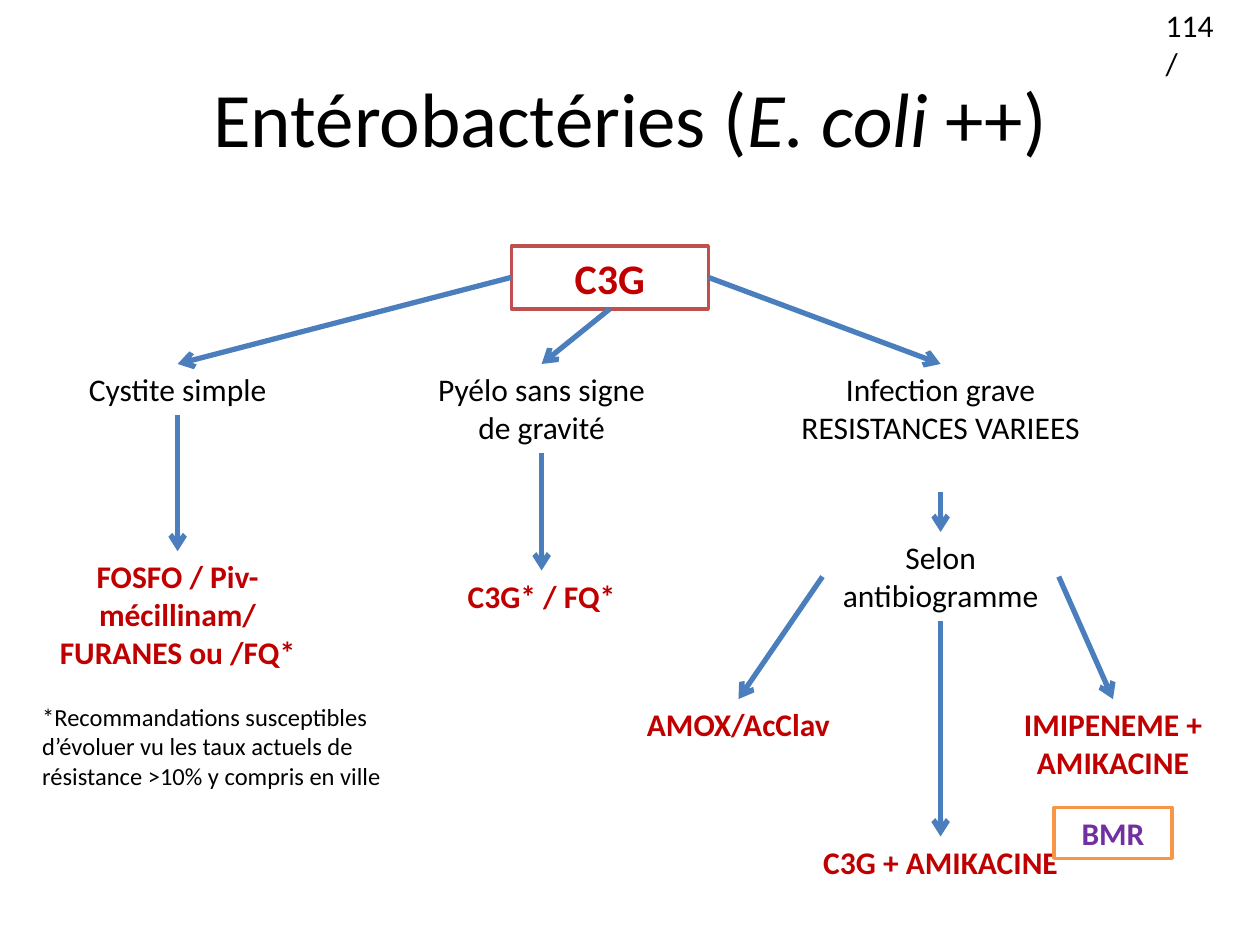
from lxml import etree
from pptx import Presentation
from pptx.dml.color import RGBColor
from pptx.enum.shapes import MSO_CONNECTOR, MSO_SHAPE
from pptx.enum.text import MSO_ANCHOR, PP_ALIGN
from pptx.oxml.ns import qn
from pptx.util import Pt

BLACK = RGBColor(0x00, 0x00, 0x00)
WHITE = RGBColor(0xFF, 0xFF, 0xFF)
DRUG_RED = RGBColor(0xC0, 0x00, 0x00)
FRAME_RED = RGBColor(0xC0, 0x50, 0x4D)
ORANGE = RGBColor(0xF7, 0x96, 0x46)
PURPLE = RGBColor(0x70, 0x30, 0xA0)
BLUE = RGBColor(0x4B, 0x7E, 0xBC)

STRAIGHT = MSO_CONNECTOR.STRAIGHT
RECTANGLE = MSO_SHAPE.RECTANGLE
CENTER, LEFT = PP_ALIGN.CENTER, PP_ALIGN.LEFT
MIDDLE, TOP_ANCHOR = MSO_ANCHOR.MIDDLE, MSO_ANCHOR.TOP
TOP, LEFT_SIDE, BOTTOM, RIGHT_SIDE = range(4)

# Centres of the tree columns, in points
CYSTITIS_X, PYELO_X, SEVERE_X = 101.5, 309.5, 537.5
AMOX_X, IMIPENEM_X = 422, 636
LEVEL_1, LEVEL_3 = 208, 399.5


def add_run(paragraph, text, size, color, bold=False, italic=False):
    run = paragraph.add_run()
    run.text = text
    font = run.font
    font.name, font.size = "Calibri", Pt(size)
    font.bold, font.italic = bold, italic
    font.color.rgb = color


def add_label(slide, center, top, width, height, lines, size=18,
              color=BLACK, bold=False, align=CENTER):
    """Text box centred on a column, one paragraph per line."""
    box = slide.shapes.add_textbox(Pt(center - width / 2), Pt(top),
                                   Pt(width), Pt(height))
    frame = box.text_frame
    frame.word_wrap = True
    for index, line in enumerate(lines):
        paragraph = frame.add_paragraph() if index else frame.paragraphs[0]
        paragraph.alignment = align
        add_run(paragraph, line, size, color, bold)
    return box


def add_drug(slide, center, top, height, text):
    return add_label(slide, center, top, 168.5, height, [text],
                     color=DRUG_RED, bold=True)


def add_framed(slide, center, top, width, height, text, size, color, border):
    box = slide.shapes.add_shape(RECTANGLE, Pt(center - width / 2), Pt(top),
                                 Pt(width), Pt(height))
    box.shadow.inherit = False
    box.fill.solid()
    box.fill.fore_color.rgb = WHITE
    box.line.color.rgb = border
    box.line.width = Pt(2)
    frame = box.text_frame
    frame.word_wrap = True
    frame.vertical_anchor = TOP_ANCHOR
    frame.paragraphs[0].alignment = CENTER
    add_run(frame.paragraphs[0], text, size, color, bold=True)
    return box


def add_arrow(slide, source, side, target):
    """Arrow from a side of the source to the top of the target."""
    arrow = slide.shapes.add_connector(STRAIGHT, 0, 0, 0, 0)
    arrow.begin_connect(source, side)
    arrow.end_connect(target, TOP)
    arrow.line.color.rgb = BLUE
    arrow.line.width = Pt(3)
    etree.SubElement(arrow.line._get_or_add_ln(), qn("a:tailEnd"), type="arrow")
    etree.SubElement(arrow._element.spPr, qn("a:effectLst"))


def add_title(slide):
    box = slide.shapes.add_textbox(Pt(36), Pt(21.6), Pt(648), Pt(90))
    frame = box.text_frame
    frame.word_wrap = True
    frame.vertical_anchor = MIDDLE
    title = frame.paragraphs[0]
    title.alignment = CENTER
    add_run(title, "Entérobactéries (", 44, BLACK)
    add_run(title, "E. coli ", 44, BLACK, italic=True)
    add_run(title, "++)", 44, BLACK)


def add_footnote(slide):
    box = slide.shapes.add_textbox(Pt(17), Pt(397.5), Pt(231), Pt(58))
    box.text_frame.word_wrap = False
    note = box.text_frame.paragraphs[0]
    lines = ("*Recommandations susceptibles",
             "d’évoluer vu les taux actuels de",
             "résistance >10% y compris en ville")
    for index, line in enumerate(lines):
        if index:
            note.add_line_break()
        add_run(note, line, 14, BLACK)


def main():
    deck = Presentation()
    deck.slide_width, deck.slide_height = Pt(720), Pt(540)
    slide = deck.slides.add_slide(deck.slide_layouts[6])

    # Page number and title
    add_label(slide, 680.5, 0, 43, 29, ["114/"], align=LEFT)
    add_title(slide)

    # Root and clinical situations
    c3g = add_framed(slide, 348.5, 140.5, 112.5, 36, "C3G", 24,
                     DRUG_RED, FRAME_RED)
    cystitis = add_label(slide, CYSTITIS_X, LEVEL_1, 135, 29,
                         ["Cystite simple"])
    pyelo = add_label(slide, PYELO_X, LEVEL_1, 135, 51,
                      ["Pyélo sans signe de gravité"])
    severe = add_label(slide, SEVERE_X, LEVEL_1, 208, 73,
                       ["Infection grave", "RESISTANCES VARIEES"])
    antibiogram = add_label(slide, SEVERE_X, 304, 135, 51,
                            ["Selon antibiogramme"])

    # Treatments
    fosfo = add_drug(slide, CYSTITIS_X, 315, 73,
                     "FOSFO / Piv-mécillinam/ FURANES ou /FQ*")
    c3g_fq = add_drug(slide, PYELO_X, 326, 29, "C3G* / FQ*")
    amox = add_drug(slide, AMOX_X, LEVEL_3, 29, "AMOX/AcClav")
    c3g_amikacin = add_drug(slide, SEVERE_X, 478, 51, "C3G + AMIKACINE")
    imipenem = add_drug(slide, IMIPENEM_X, LEVEL_3, 51,
                        "IMIPENEME + AMIKACINE")
    add_framed(slide, IMIPENEM_X, 461.5, 67.5, 29, "BMR", 18, PURPLE, ORANGE)

    # Decision arrows
    for source, side, target in (
        (c3g, LEFT_SIDE, cystitis),
        (c3g, BOTTOM, pyelo),
        (c3g, RIGHT_SIDE, severe),
        (cystitis, BOTTOM, fosfo),
        (pyelo, BOTTOM, c3g_fq),
        (severe, BOTTOM, antibiogram),
        (antibiogram, LEFT_SIDE, amox),
        (antibiogram, BOTTOM, c3g_amikacin),
        (antibiogram, RIGHT_SIDE, imipenem),
    ):
        add_arrow(slide, source, side, target)

    add_footnote(slide)
    deck.save("out.pptx")


if __name__ == "__main__":
    main()
